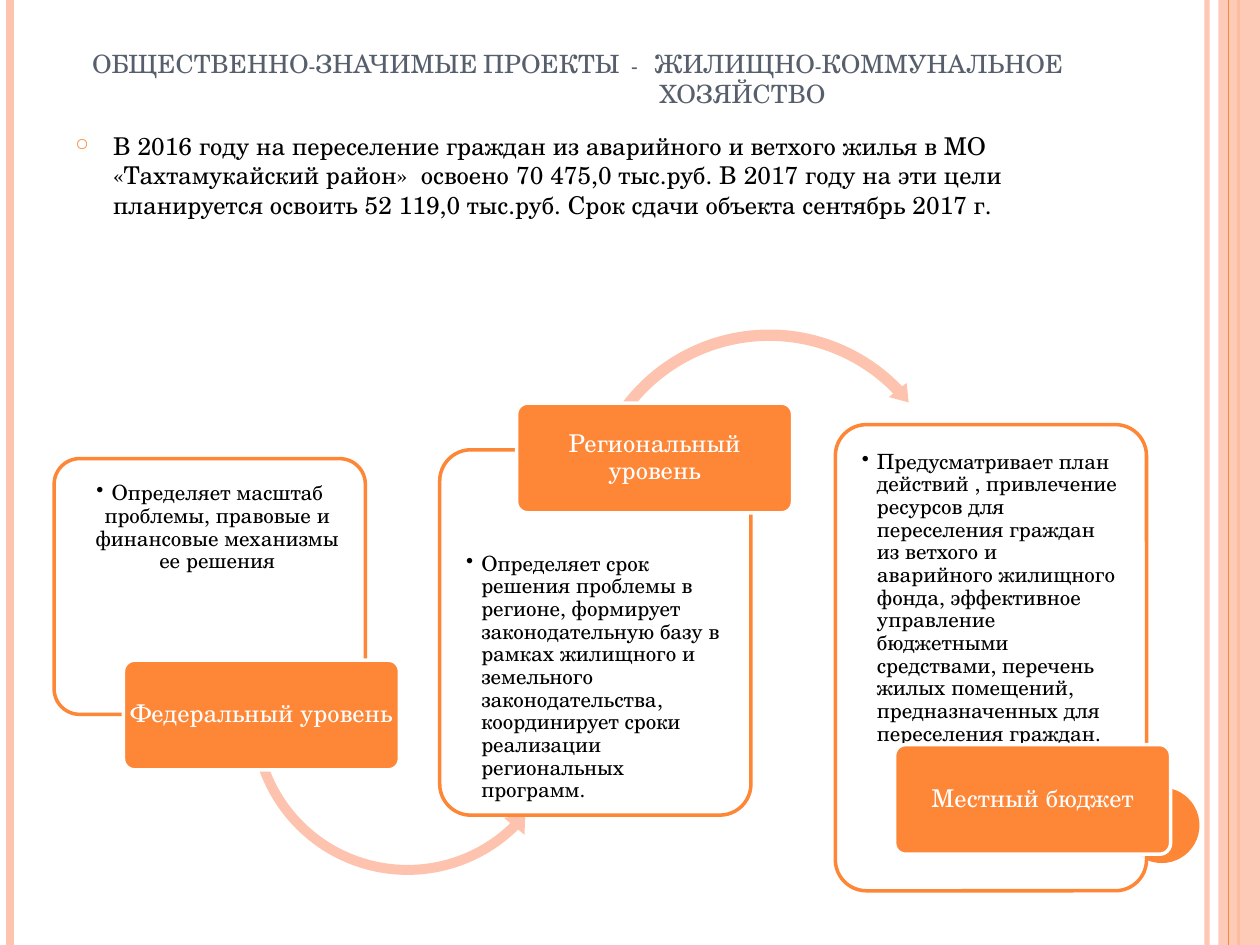
from lxml import etree
from pptx import Presentation
from pptx.dml.color import RGBColor
from pptx.enum.shapes import MSO_CONNECTOR, MSO_SHAPE
from pptx.enum.text import MSO_ANCHOR, PP_ALIGN
from pptx.oxml.ns import qn
from pptx.util import Inches, Pt

STRAIGHT = MSO_CONNECTOR.STRAIGHT
RECT, OVAL, ROUNDED = MSO_SHAPE.RECTANGLE, MSO_SHAPE.OVAL, MSO_SHAPE.ROUNDED_RECTANGLE
LEFT_ARC, RIGHT_ARC = MSO_SHAPE.LEFT_CIRCULAR_ARROW, MSO_SHAPE.CIRCULAR_ARROW
TOP, MIDDLE, BOTTOM = MSO_ANCHOR.TOP, MSO_ANCHOR.MIDDLE, MSO_ANCHOR.BOTTOM
LEFT, CENTER = PP_ALIGN.LEFT, PP_ALIGN.CENTER

FONT = "TeX Gyre Schola"
COLORS = {"orange": "FE8637", "peach": "FEC3AE", "slate": "575F6D",
          "black": "000000", "white": "FFFFFF"}
DEFAULT_INSETS = (0.1, 0.05)
BUTTON_SIZE = (2.19, 0.87)
CARD_WIDTH = 2.47

TITLE = ["ОБЩЕСТВЕННО-ЗНАЧИМЫЕ ПРОЕКТЫ  -   ЖИЛИЩНО-КОММУНАЛЬНОЕ", "ХОЗЯЙСТВО"]
INTRO = ("В 2016 году на переселение граждан из аварийного и ветхого жилья в МО "
         "«Тахтамукайский район»  освоено 70 475,0 тыс.руб. В 2017 году на эти цели "
         "планируется освоить 52 119,0 тыс.руб. Срок сдачи объекта сентябрь 2017 г.")
FEDERAL = "Определяет масштаб проблемы, правовые и финансовые механизмы ее решения"
REGIONAL = ("Определяет срок решения проблемы в регионе, формирует законодательную базу "
            "в рамках жилищного и земельного законодательства, координирует сроки "
            "реализации региональных программ.")
LOCAL = ("Предусматривает план действий , привлечение ресурсов для переселения граждан "
         "из ветхого и аварийного жилищного фонда, эффективное управление бюджетными "
         "средствами, перечень жилых помещений, предназначенных для переселения граждан.")


def rgb(name):
    """Return the named colour."""
    return RGBColor.from_string(COLORS[name])


def set_alpha(element, percent):
    """Set the opacity of the first solid colour inside an element."""
    color = next(element.iter(qn("a:srgbClr")))
    etree.SubElement(color, qn("a:alpha")).set("val", str(percent * 1000))


def add_rule(slide, x, color, width, opacity=100):
    """Draw a full-height vertical line."""
    rule = slide.shapes.add_connector(STRAIGHT, Inches(x), 0, Inches(x), Inches(7.5))
    rule.line.color.rgb = rgb(color)
    rule.line.width = Pt(width)
    properties = rule.line._get_or_add_ln().getparent()
    etree.SubElement(properties, qn("a:effectLst"))
    if opacity < 100:
        set_alpha(properties, opacity)


def add_block(slide, kind, area, fill, line=None, opacity=100, adjustments=()):
    """Draw a filled preset shape, outlined if a line colour is given."""
    block = slide.shapes.add_shape(kind, *map(Inches, area))
    block.shadow.inherit = False
    block.fill.solid()
    block.fill.fore_color.rgb = rgb(fill)
    if opacity < 100:
        set_alpha(block._element.spPr, opacity)
    if line:
        block.line.color.rgb = rgb(line)
        block.line.width = Pt(2)
    else:
        block.line.fill.background()
    for index, value in enumerate(adjustments):
        block.adjustments[index] = value
    return block


def add_text_box(slide, area, insets, anchor=TOP):
    """Add an empty wrapping text box and return its frame."""
    frame = slide.shapes.add_textbox(*map(Inches, area)).text_frame
    frame.word_wrap = True
    frame.vertical_anchor = anchor
    frame.margin_left = frame.margin_right = Inches(insets[0])
    frame.margin_top = frame.margin_bottom = Inches(insets[1])
    return frame


def add_run(para, text, size, color):
    """Append a formatted run and return it."""
    span = para.add_run()
    span.text = text
    span.font.name = FONT
    span.font.size = Pt(size)
    span.font.color.rgb = rgb(color)
    return span


def set_bullet(para, char, indent, color=None, size=100):
    """Give a paragraph a hanging bullet."""
    properties = para._p.get_or_add_pPr()
    properties.set("marL", str(Inches(indent)))
    properties.set("indent", str(-Inches(indent)))
    if color:
        holder = etree.SubElement(properties, qn("a:buClr"))
        etree.SubElement(holder, qn("a:srgbClr")).set("val", COLORS[color])
    etree.SubElement(properties, qn("a:buSzPct")).set("val", str(size * 1000))
    etree.SubElement(properties, qn("a:buChar")).set("char", char)


def add_title(slide):
    """Write the two-line heading with its shifted second line."""
    frame = add_text_box(slide, (0.5, 0.3, 8.17, 0.61), DEFAULT_INSETS, BOTTOM)
    for index, text in enumerate(TITLE):
        para = frame.add_paragraph() if index else frame.paragraphs[0]
        para.alignment = CENTER
        para._p.get_or_add_pPr().set("marL", str(Inches(1.3 * index)))
        span = add_run(para, text, 14.4, "slate")
        span.font._element.set("cap", "small")


def add_intro(slide):
    """Write the introductory bullet."""
    para = add_text_box(slide, (0.5, 0.99, 8.17, 6.09), DEFAULT_INSETS).paragraphs[0]
    para.space_before = Pt(6)
    set_bullet(para, "○", 0.3, "orange", 70)
    add_run(para, INTRO, 14, "black")


def add_card(slide, left, top, height, text_area, text, align=LEFT):
    """Draw an outlined card with one bulleted paragraph."""
    add_block(slide, ROUNDED, (left, top, CARD_WIDTH, height), "white", "orange", 90, (0.1,))
    para = add_text_box(slide, text_area, (0.14, 0.14)).paragraphs[0]
    para.alignment = align
    para.level = 1
    para.line_spacing = 0.9
    set_bullet(para, "•", 0.12)
    add_run(para, text, 12, "black")


def add_button(slide, left, top, text):
    """Draw an orange level label with its centred caption."""
    width, height = BUTTON_SIZE
    pad = 0.02
    add_block(slide, ROUNDED, (left, top, width, height), "orange", "white", 100, (0.1,))
    area = (left + pad, top + pad, width - 2 * pad, height - 2 * pad)
    para = add_text_box(slide, area, (pad, pad), MIDDLE).paragraphs[0]
    para.alignment = CENTER
    para.line_spacing = 0.9
    add_run(para, text, 14, "white")


def add_arc(slide, kind, left, top, size, adjustments, rotation=0):
    """Draw a curved arrow between two cards."""
    arc = add_block(slide, kind, (left, top, size, size), "peach", adjustments=adjustments)
    arc.rotation = rotation


def add_frame(slide):
    """Draw the side rules, the right band and the dot."""
    add_rule(slide, 9.58, "peach", 3, 93)
    add_rule(slide, 0.08, "peach", 4.5)
    add_rule(slide, 9.83, "orange", 1.5)
    add_block(slide, RECT, (9.67, 0, 0.33, 7.5), "peach", opacity=87)
    add_rule(slide, 9.75, "orange", 0.75)
    add_block(slide, OVAL, (8.92, 6.25, 0.6, 0.6), "orange")


def main():
    """Build the slide and save the deck."""
    deck = Presentation()
    deck.slide_width, deck.slide_height = Inches(10), Inches(7.5)
    slide = deck.slides.add_slide(deck.slide_layouts[6])
    add_frame(slide)
    add_title(slide)
    add_intro(slide)

    add_card(slide, 0.43, 3.64, 2.03, (0.48, 3.69, 2.37, 1.5), FEDERAL, CENTER)
    add_arc(slide, LEFT_ARC, 1.92, 4.38, 2.63, (0.03, 3.67, 27.34, 96.16, 0.04))
    add_button(slide, 0.98, 5.24, "Федеральный уровень")

    add_card(slide, 3.49, 3.57, 2.9, (3.56, 4.25, 2.33, 2.14), REGIONAL)
    add_arc(slide, RIGHT_ARC, 4.6, 2.57, 3.01, (0.03, 3.19, 202.78, 133.48, 0.03), 338.2)
    add_button(slide, 4.1, 3.2, "Региональный уровень")

    add_card(slide, 6.63, 3.37, 3.7, (6.7, 3.44, 2.32, 2.76), LOCAL)
    add_button(slide, 7.1, 5.91, "Местный бюджет")
    deck.save("out.pptx")


if __name__ == "__main__":
    main()
